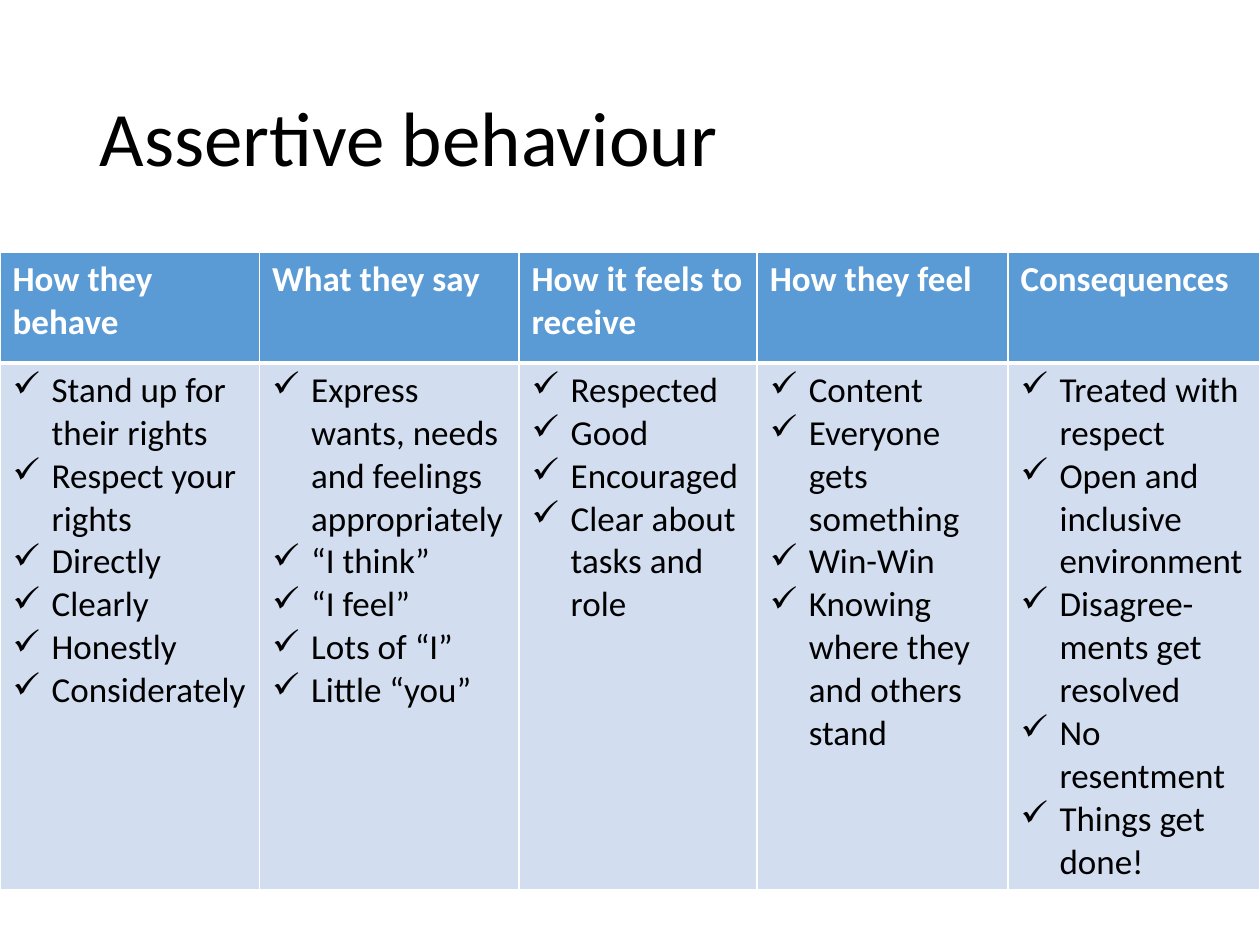
from pptx import Presentation
from pptx.dml.color import RGBColor as RGB
from pptx.enum.text import MSO_ANCHOR as Anchor, MSO_AUTO_SIZE as AutoSize, PP_ALIGN as Align
from pptx.oxml import parse_xml
from pptx.oxml.ns import nsdecls
from pptx.util import Inches, Pt

COLORS = {"text": "000000", "white": "FFFFFF", "header": "5B9BD5", "body": "D2DEEF"}
FONT = "Calibri"

COLUMNS = [
    ("How they behave", 2.06, [
        "Stand up for their rights", "Respect your rights", "Directly",
        "Clearly", "Honestly", "Considerately"]),
    ("What they say", 2.06, [
        "Express wants, needs and feelings appropriately", "“I think”",
        "“I feel”", "Lots of “I”", "Little “you”"]),
    ("How it feels to receive", 1.89, [
        "Respected", "Good", "Encouraged", "Clear about tasks and role"]),
    ("How they feel", 1.99, [
        "Content", "Everyone gets something", "Win-Win",
        "Knowing where they and others stand"]),
    ("Consequences", 2, [
        "Treated with respect", "Open and inclusive environment",
        "Disagree-ments get resolved", "No resentment", "Things get done!"]),
]


def add_text(p, text, size=20, color="text", bold=False):
    r = p.add_run()
    r.text = text
    r.font.name, r.font.size, r.font.bold = FONT, Pt(size), bold
    r.font.color.rgb = RGB.from_string(COLORS[color])


def add_bullet(p, char="✓", indent=0.31):
    pPr = p._p.get_or_add_pPr()
    pPr.set("marL", str(Inches(indent)))
    pPr.set("indent", str(-Inches(indent)))
    pPr.append(parse_xml(f'<a:buChar {nsdecls("a")} char="{char}"/>'))


def set_borders(cell, **widths):
    tcPr = cell._tc.get_or_add_tcPr()
    for i, (side, width) in enumerate(widths.items()):
        tcPr.insert(i, parse_xml(
            f'<a:ln{side} {nsdecls("a")} w="{Pt(width)}"><a:solidFill>'
            f'<a:srgbClr val="{COLORS["white"]}"/></a:solidFill></a:ln{side}>'))


class SlideBuilder:
    def __init__(self, prs):
        self.s = prs.slides.add_slide(prs.slide_layouts[5])

    def title(self, text, x, y, w, h):
        sp = self.s.shapes.title
        sp.left, sp.top, sp.width, sp.height = map(Inches, (x, y, w, h))
        tf = sp.text_frame
        tf.auto_size, tf.vertical_anchor = AutoSize.NONE, Anchor.MIDDLE
        p = tf.paragraphs[0]
        p.alignment, p.line_spacing = Align.LEFT, 0.9
        add_text(p, text, size=44)

    def cell(self, cell, lines, fill, bullets=False, **style):
        cell.fill.solid()
        cell.fill.fore_color.rgb = RGB.from_string(COLORS[fill])
        tf = cell.text_frame
        for i, line in enumerate(lines):
            p = tf.add_paragraph() if i else tf.paragraphs[0]
            if bullets:
                add_bullet(p)
            add_text(p, line, **style)

    def table(self, columns, x, y, w, row_heights):
        frame = self.s.shapes.add_table(
            len(row_heights), len(columns), Inches(x), Inches(y),
            Inches(w), Inches(sum(row_heights)))
        table = frame.table
        for row, height in zip(table.rows, row_heights):
            row.height = Inches(height)
        for i, (heading, width, items) in enumerate(columns):
            table.columns[i].width = Inches(width)
            head, body = table.cell(0, i), table.cell(1, i)
            self.cell(head, [heading], "header", color="white", bold=True)
            self.cell(body, items, "body", bullets=True)
            # A thick rule separates the header from the body
            set_borders(head, L=1, R=1, T=1, B=3)
            set_borders(body, L=1, R=1, T=3, B=1)


def main():
    prs = Presentation()
    prs.slide_width, prs.slide_height = Inches(10), Inches(7.5)
    slide = SlideBuilder(prs)

    # Title
    slide.title("Assertive behaviour", 0.69, 0.4, 8.62, 1.45)

    # Behaviour table
    slide.table(COLUMNS, 0, 2, 10, [0.88, 4.11])

    prs.save("out.pptx")


if __name__ == "__main__":
    main()
